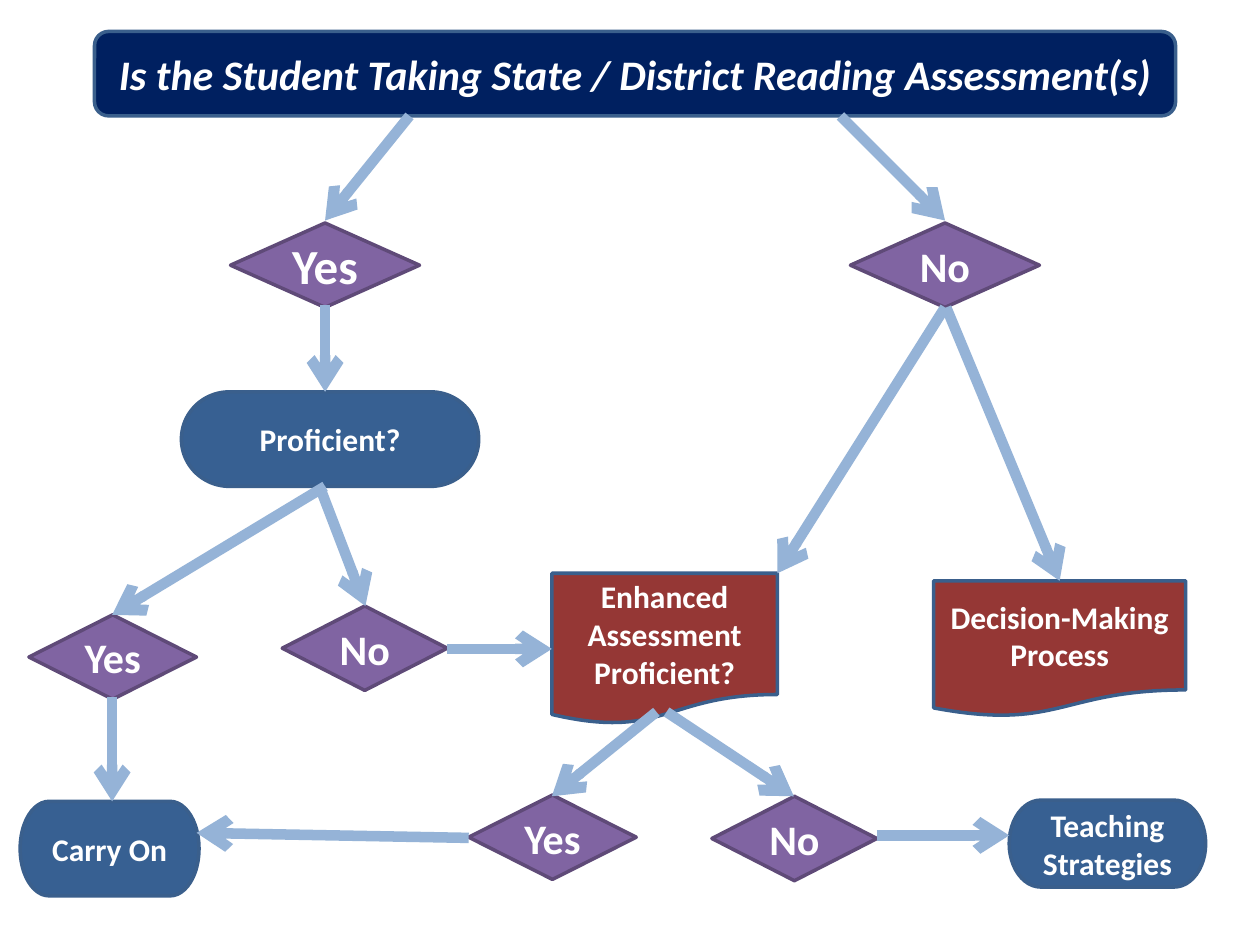
from dataclasses import dataclass

from lxml import etree
from pptx import Presentation
from pptx.dml.color import RGBColor
from pptx.enum.shapes import MSO_CONNECTOR, MSO_SHAPE
from pptx.enum.text import MSO_ANCHOR, PP_ALIGN
from pptx.oxml.ns import qn
from pptx.util import Inches, Pt

QUESTION = MSO_SHAPE.FLOWCHART_ALTERNATE_PROCESS
DECISION = MSO_SHAPE.FLOWCHART_DECISION
DOCUMENT = MSO_SHAPE.FLOWCHART_DOCUMENT
TERMINATOR = MSO_SHAPE.FLOWCHART_TERMINATOR
STRAIGHT = MSO_CONNECTOR.STRAIGHT
MIDDLE = MSO_ANCHOR.MIDDLE
CENTER = PP_ALIGN.CENTER

COLUMNS, ROWS = 100, 75


@dataclass(frozen=True)
class Theme:
    font: str = "Calibri"
    text: str = "FFFFFF"
    navy: str = "002060"
    blue: str = "376092"
    purple: str = "8064A2"
    red: str = "953735"
    arrow: str = "95B3D7"
    blue_outline: str = "3A5F8C"
    purple_outline: str = "5F4A78"
    label_size: int = 18
    heading_size: int = 24
    answer_size: int = 28
    outline_width: int = 2
    arrow_width: int = 6


def write_text(shape, text, *, font, size, color, italic=False, wrap=True):
    frame = shape.text_frame
    frame.word_wrap = wrap
    frame.vertical_anchor = MIDDLE
    frame.text = text
    for paragraph in frame.paragraphs:
        paragraph.alignment = CENTER
        paragraph.font.name = font
        paragraph.font.size = Pt(size)
        paragraph.font.bold = True
        paragraph.font.italic = italic
        paragraph.font.color.rgb = RGBColor.from_string(color)


class Flowchart:
    def __init__(self, presentation, theme):
        self.theme = theme
        self.slide = presentation.slides.add_slide(presentation.slide_layouts[6])
        self.column = presentation.slide_width / COLUMNS
        self.row = presentation.slide_height / ROWS

    def place(self, column, row):
        return round(column * self.column), round(row * self.row)

    def node(self, kind, box, text, fill, outline, size, **text_format):
        left, top, width, height = box
        shape = self.slide.shapes.add_shape(
            kind, *self.place(left, top), *self.place(width, height)
        )
        shape.shadow.inherit = False
        shape.fill.solid()
        shape.fill.fore_color.rgb = RGBColor.from_string(fill)
        shape.line.color.rgb = RGBColor.from_string(outline)
        shape.line.width = Pt(self.theme.outline_width)
        write_text(shape, text, font=self.theme.font, size=size,
                   color=self.theme.text, **text_format)

    def question(self, box, text):
        theme = self.theme
        self.node(QUESTION, box, text, theme.navy, theme.blue_outline,
                  theme.heading_size, italic=True)

    def decision(self, box, text, size=None):
        theme = self.theme
        self.node(DECISION, box, text, theme.purple, theme.purple_outline,
                  size or theme.heading_size, wrap=False)

    def document(self, box, text):
        theme = self.theme
        self.node(DOCUMENT, box, text, theme.red, theme.blue_outline, theme.label_size)

    def terminator(self, box, text):
        theme = self.theme
        self.node(TERMINATOR, box, text, theme.blue, theme.blue_outline, theme.label_size)

    def arrow(self, start, end):
        connector = self.slide.shapes.add_connector(
            STRAIGHT, *self.place(*start), *self.place(*end)
        )
        connector.line.color.rgb = RGBColor.from_string(self.theme.arrow)
        connector.line.width = Pt(self.theme.arrow_width)
        properties = connector.element.spPr
        etree.SubElement(properties.find(qn("a:ln")), qn("a:tailEnd"), type="arrow")
        etree.SubElement(properties, qn("a:effectLst"))


def main():
    presentation = Presentation()
    presentation.slide_width = Inches(10)
    presentation.slide_height = Inches(7.5)
    theme = Theme()
    chart = Flowchart(presentation, theme)

    chart.question((7.5, 2.5, 85.8, 6.7),
                   "Is the Student Taking State / District Reading Assessment(s)")

    chart.decision((18.3, 17.7, 15, 6.7), "Yes", theme.answer_size)
    for box, text in (
        ((67.5, 17.7, 15, 6.7), "No"),
        ((2.3, 48.8, 13.3, 6.7), "Yes"),
        ((22.4, 48.1, 13.1, 6.7), "No"),
        ((37.2, 63.1, 13.3, 6.7), "Yes"),
        ((56.5, 63.2, 13.1, 6.7), "No"),
    ):
        chart.decision(box, text)

    chart.document((74.1, 46.1, 20, 10.8), "Decision-Making Process")
    chart.document((43.8, 45.5, 17.9, 12), "Enhanced Assessment\nProficient?")

    chart.terminator((14.4, 31.1, 23.6, 7.5), "Proficient?")
    chart.terminator((1.6, 63.6, 14.2, 7.5), "Carry On")
    chart.terminator((80.1, 63.5, 15.6, 6.9), "Teaching Strategies")

    for start, end in (
        ((32.5, 9.2), (25.8, 17.5)),
        ((66.7, 9.2), (75, 17.5)),
        ((25.8, 24.2), (25.8, 31.1)),
        ((75.1, 24.4), (84.1, 46.1)),
        ((75, 24.4), (61.7, 45.5)),
        ((25.8, 38.6), (8.9, 48.8)),
        ((25.4, 38.7), (29, 48.1)),
        ((8.9, 55.3), (8.9, 63.6)),
        ((35.5, 51.5), (43.8, 51.5)),
        ((52.1, 56.5), (43.8, 63.2)),
        ((52.9, 56.5), (63, 63.2)),
        ((37.2, 66.5), (15.6, 66.1)),
        ((69.6, 66.3), (80.1, 66.3)),
    ):
        chart.arrow(start, end)

    presentation.save("out.pptx")


if __name__ == "__main__":
    main()
